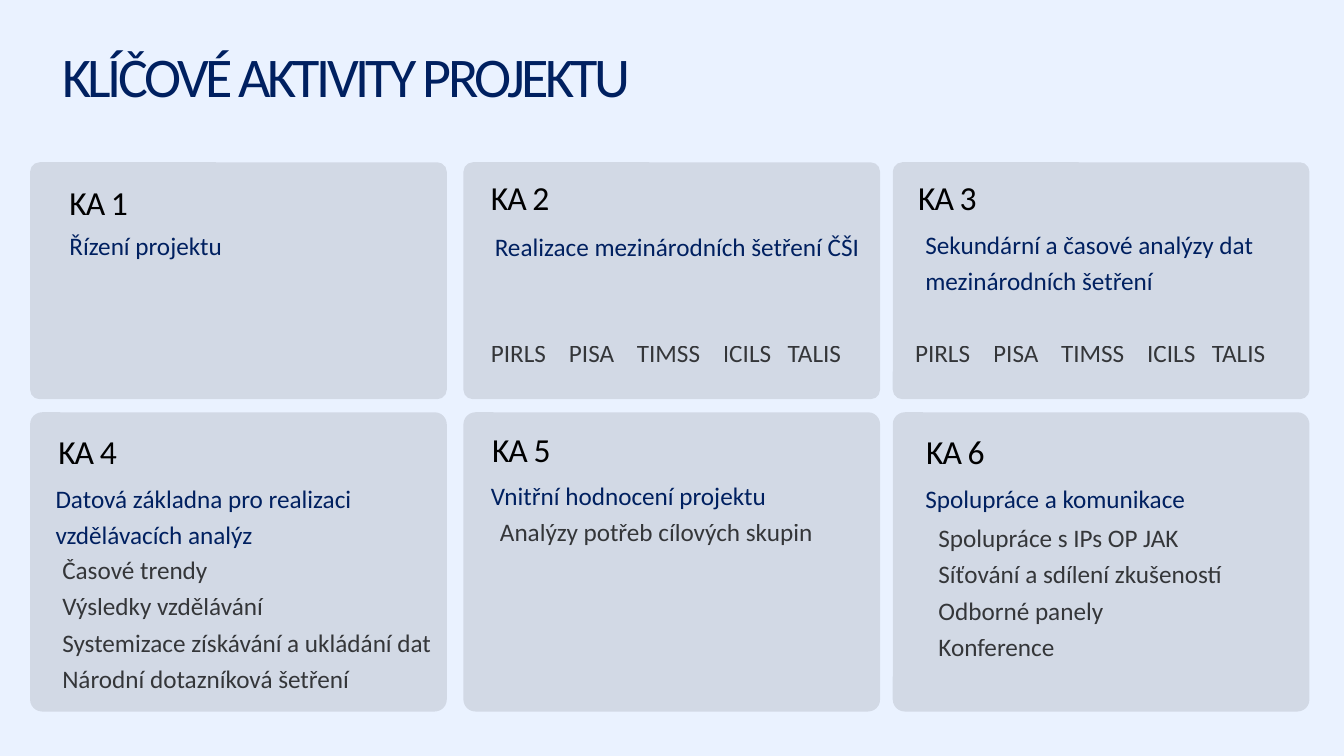
from pptx import Presentation
from pptx import util as u
from pptx.dml.color import RGBColor
from pptx.enum import shapes, text
from pptx.oxml.ns import qn
from lxml import etree

COLORS = {"background": "EAF2FF", "navy": "002060", "black": "000000"}
FONT = "Calibri"
STUDIES = "PIRLS\tPISA\tTIMSS\tICILS\tTALIS"
STUDY_STOPS = (1.97, 3.68, 5.85, 7.48)

CARD_LEFTS = (0.76, 11.68, 22.5)
CARD_ROWS = ((4.09, 5.97), (10.39, 7.54))
CARD_WIDTH = 10.5

# Each text is (left, top, lines), in centimetres
ACTIVITIES = [
    {"label": (1.75, 4.45, ["KA 1"]),
     "heading": (1.75, 5.51, ["Řízení projektu"])},
    {"label": (12.37, 4.34, ["KA 2"]),
     "heading": (12.47, 5.55, ["Realizace mezinárodních šetření ČŠI"]),
     "details": (12.37, 8.23, [STUDIES])},
    {"label": (23.14, 4.34, ["KA 3"]),
     "heading": (23.32, 5.49, ["Sekundární a časové analýzy dat mezinárodních šetření"]),
     "details": (23.06, 8.23, [STUDIES])},
    {"label": (1.47, 10.72, ["KA 4"]),
     "heading": (1.4, 11.89, ["Datová základna pro realizaci vzdělávacích analýz"]),
     "details": (1.57, 13.69, ["Časové trendy", "Výsledky vzdělávání",
                               "Systemizace získávání a ukládání dat",
                               "Národní dotazníková šetření"])},
    {"label": (12.4, 10.69, ["KA 5"]),
     "heading": (12.37, 11.81, ["Vnitřní hodnocení projektu"]),
     "details": (12.6, 12.73, ["Analýzy potřeb cílových skupin"])},
    {"label": (23.34, 10.74, ["KA 6"]),
     "heading": (23.32, 11.89, ["Spolupráce a komunikace"]),
     "details": (23.65, 12.88, ["Spolupráce s IPs OP JAK", "Síťování a sdílení zkušeností",
                                "Odborné panely", "Konference"])},
]
# Width, size, colour, line spacing, letter spacing, opacity in percent
STYLES = {
    "title": (18.67, 40, "navy", 0.9, -2.5, 100),
    "label": (6.05, 24, "black", 1, -0.7, 100),
    "heading": (9.7, 18, "navy", 1.2, 0, 100),
    "details": (9.86, 18, "black", 1.2, 0, 75),
}


def set_opacity(element, percent):
    for color in element.iter(qn("a:srgbClr")):
        etree.SubElement(color, qn("a:alpha"), val=str(percent * 1000))


def fill_box(box, role, left, top, lines):
    """Place a text box and write its lines in the style of the role."""
    width, size, color, line_spacing, letter_spacing, opacity = STYLES[role]
    padding = 0.2 if role == "title" else 0.13
    box.left, box.top, box.width = u.Cm(left), u.Cm(top), u.Cm(width)
    box.height = u.Cm(round(len(lines) * size * line_spacing * 0.043 + 2 * padding, 2))
    frame = box.text_frame
    frame.word_wrap = True
    frame.auto_size = text.MSO_AUTO_SIZE.NONE
    frame.vertical_anchor = text.MSO_ANCHOR.TOP
    frame.margin_left = frame.margin_right = 0
    frame.margin_top = frame.margin_bottom = u.Cm(padding)
    frame.text = "\n".join(lines)
    for para in frame.paragraphs:
        para.alignment = text.PP_ALIGN.LEFT
        para.line_spacing = line_spacing
        if "\t" in para.text:
            stops = etree.SubElement(para._p.get_or_add_pPr(), qn("a:tabLst"))
            for stop in STUDY_STOPS:
                etree.SubElement(stops, qn("a:tab"), pos=str(u.Cm(stop)), algn="l")
        para.font.name = FONT
        para.font.size = u.Pt(size)
        para.font.color.rgb = RGBColor.from_string(COLORS[color])
        if opacity < 100:
            set_opacity(para._p, opacity)
        if letter_spacing:
            for span in para.runs:
                span._r.get_or_add_rPr().set("spc", str(round(letter_spacing * 100)))


deck = Presentation()
deck.slide_width, deck.slide_height = u.Cm(33.87), u.Cm(19.05)
page = deck.slides.add_slide(deck.slide_layouts[5])
page.background.fill.solid()
page.background.fill.fore_color.rgb = RGBColor.from_string(COLORS["background"])

fill_box(page.shapes.title, "title", 1.57, 1.04, ["KLÍČOVÉ AKTIVITY PROJEKTU"])

for top, height in CARD_ROWS:
    for left in CARD_LEFTS:
        card = page.shapes.add_shape(shapes.MSO_SHAPE.ROUNDED_RECTANGLE, u.Cm(left),
                                     u.Cm(top), u.Cm(CARD_WIDTH), u.Cm(height))
        card.adjustments[0] = 0.04
        card.shadow.inherit = False
        card.fill.solid()
        card.fill.fore_color.rgb = RGBColor.from_string(COLORS["black"])
        set_opacity(card.fill._xPr, 10)
        card.line.fill.background()

for activity in ACTIVITIES:
    for role, (left, top, lines) in activity.items():
        box = page.shapes.add_textbox(0, 0, 0, 0)
        fill_box(box, role, left, top, lines)

deck.save("out.pptx")
